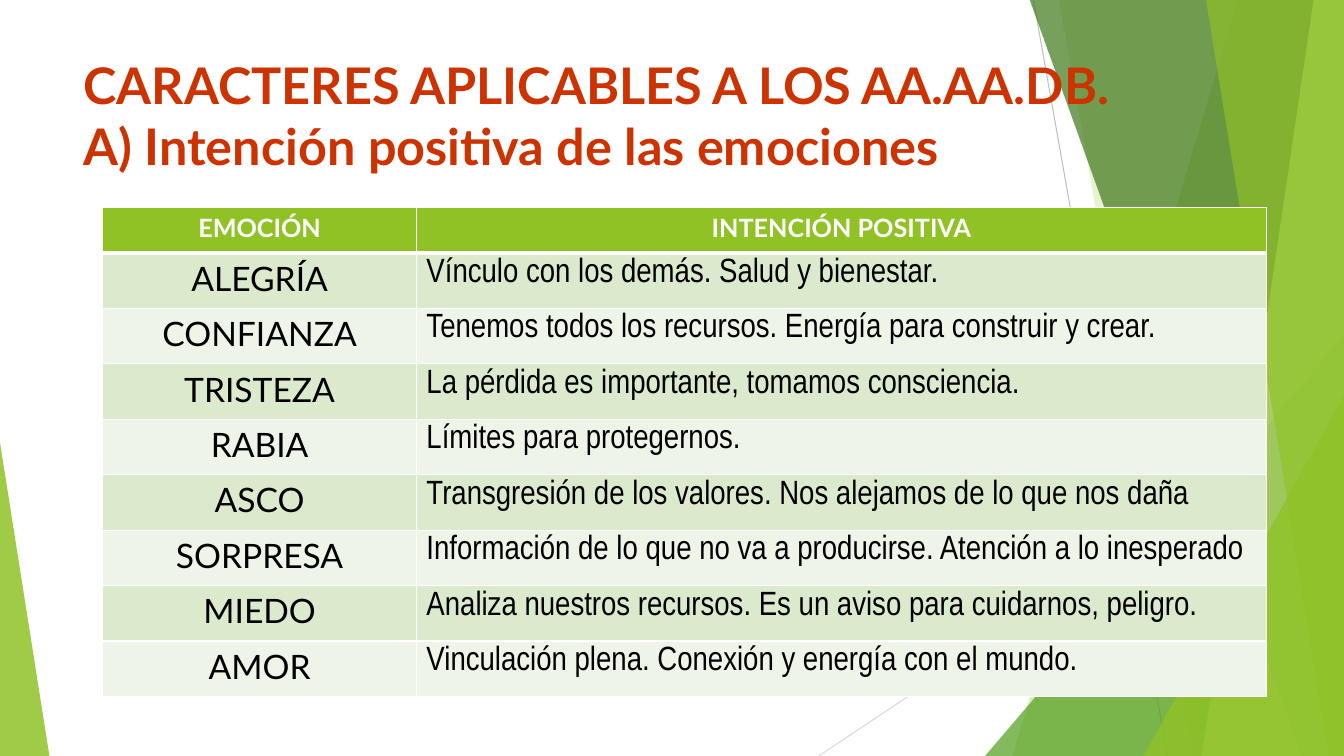
from lxml import etree
from pptx import Presentation
from pptx.dml.color import RGBColor
from pptx.enum import shapes, text
from pptx.oxml import ns
from pptx.util import Inches, Pt

COLORS = {
    "white": "FFFFFF", "black": "000000", "title": "CC3300", "green": "90C226",
    "leaf": "54A021", "forest": "3F7819", "lime": "C0E474",
    "gray": "BFBFBF", "light_gray": "D9D9D9", "band": "DBE9CD", "pale": "EEF4E8",
}
EMOTIONS = [
    ("ALEGRÍA", "Vínculo con los demás. Salud y bienestar."),
    ("CONFIANZA", "Tenemos todos los recursos. Energía para construir y crear."),
    ("TRISTEZA", "La pérdida es importante, tomamos consciencia."),
    ("RABIA", "Límites para protegernos."),
    ("ASCO", "Transgresión de los valores. Nos alejamos de lo que nos daña"),
    ("SORPRESA", "Información de lo que no va a producirse. Atención a lo inesperado"),
    ("MIEDO", "Analiza nuestros recursos. Es un aviso para cuidarnos, peligro."),
    ("AMOR", "Vinculación plena. Conexión y energía con el mundo."),
]


def paint(sp, color, alpha):
    sp.shadow.inherit = False
    sp.line.fill.background()
    sp.fill.solid()
    sp.fill.fore_color.rgb = RGBColor.from_string(COLORS[color])
    rgb = sp.element.spPr.find(ns.qn("a:solidFill"))[0]
    etree.SubElement(rgb, ns.qn("a:alpha"), val=str(alpha * 1000))


def style(font, name, size, color, bold):
    values = {"name": name, "size": Pt(size), "bold": bold}
    for key, value in values.items():
        setattr(font, key, value)
    font.color.rgb = RGBColor.from_string(COLORS[color])


prs = Presentation()
prs.slide_width, prs.slide_height = Inches(13.33), Inches(7.5)
s = prs.slides.add_slide(prs.slide_layouts[5])

for x1, y1, x2, y2, color in [
    (10.25, 0, 11.58, 7.5, "gray"),
    (13.33, 4.03, 8.12, 7.5, "light_gray"),
]:
    line = s.shapes.add_connector(
        shapes.MSO_CONNECTOR.STRAIGHT, Inches(x1), Inches(y1), Inches(x2), Inches(y2))
    line.line.width = Pt(0.75)
    line.line.color.rgb = RGBColor.from_string(COLORS[color])
    etree.SubElement(line.element.spPr, ns.qn("a:effectLst"))

facets = [
    ("panel", 12.28, 10.04, "green", 30),
    ("panel", 10.5, 11.83, "green", 20),
    ("triangle", 9.77, 3.33, 3.56, 1, "leaf", 72),
    ("panel", 10.21, 12.91, "forest", 70),
    ("panel", 13.03, 11.92, "lime", 70),
    ("panel", 11.96, 13.18, "green", 65),
    ("triangle", 11.34, 3.93, 1.99, 1, "green", 80),
    ("triangle", 0, 4.39, 0.49, 0, "green", 85),
]
for kind, *place, color, alpha in facets:
    if kind == "panel":
        top_x, bottom_x = place
        outline = s.shapes.build_freeform(Inches(top_x), Inches(-0.01))
        outline.add_line_segments(
            [(Inches(x), Inches(y)) for x, y in [(13.33, -0.01), (13.33, 7.5), (bottom_x, 7.5)]])
        sp = outline.convert_to_shape()
    else:
        left, top, width, apex = place
        sp = s.shapes.add_shape(
            shapes.MSO_SHAPE.ISOSCELES_TRIANGLE,
            Inches(left), Inches(top), Inches(width), Inches(7.5 - top))
        sp.adjustments[0] = apex
    paint(sp, color, alpha)

title = s.shapes.title
title.element.getparent().append(title.element)
title.left, title.top, title.width, title.height = map(Inches, (0.73, 0.49, 11, 1.4))
tf = title.text_frame
tf.text = "CARACTERES APLICABLES A LOS AA.AA.DB.\vA) Intención positiva de las emociones"
tf.word_wrap = True
tf.auto_size = text.MSO_AUTO_SIZE.NONE
tf.vertical_anchor = text.MSO_ANCHOR.TOP
p = tf.paragraphs[0]
p.alignment = text.PP_ALIGN.LEFT
for r in p.runs:
    style(r.font, "Lato", 36, "title", True)

rows = [("EMOCIÓN", "INTENCIÓN POSITIVA")] + EMOTIONS
table = s.shapes.add_table(
    len(rows), 2, Inches(1.02), Inches(2.06), Inches(11.54), Inches(4.85)).table
for column, width in zip(table.columns, (3.11, 8.43)):
    column.width = Inches(width)

for i, row in enumerate(rows):
    header = i == 0
    table.rows[i].height = Inches(0.45 if header else 0.55)
    fill = "green" if header else ("pale", "band")[i % 2]
    for j, words in enumerate(row):
        cell = table.cell(i, j)
        cell.text = words
        p = cell.text_frame.paragraphs[0]
        intention = j == 1 and not header
        p.alignment = text.PP_ALIGN.LEFT if intention else text.PP_ALIGN.CENTER
        style(p.runs[0].font, "Arial Narrow" if intention else "Lato",
              18 if header else 24, "white" if header else "black", header)
        tc_pr = cell._tc.get_or_add_tcPr()
        for side in ("lnL", "lnR", "lnT", "lnB"):
            thick = (header and side == "lnB") or (i == 1 and side == "lnT")
            edge = etree.SubElement(tc_pr, ns.qn("a:" + side), w=str(Pt(3 if thick else 1)))
            ink = etree.SubElement(edge, ns.qn("a:solidFill"))
            etree.SubElement(ink, ns.qn("a:srgbClr"), val=COLORS["white"])
        cell.fill.solid()
        cell.fill.fore_color.rgb = RGBColor.from_string(COLORS[fill])

prs.save("out.pptx")
